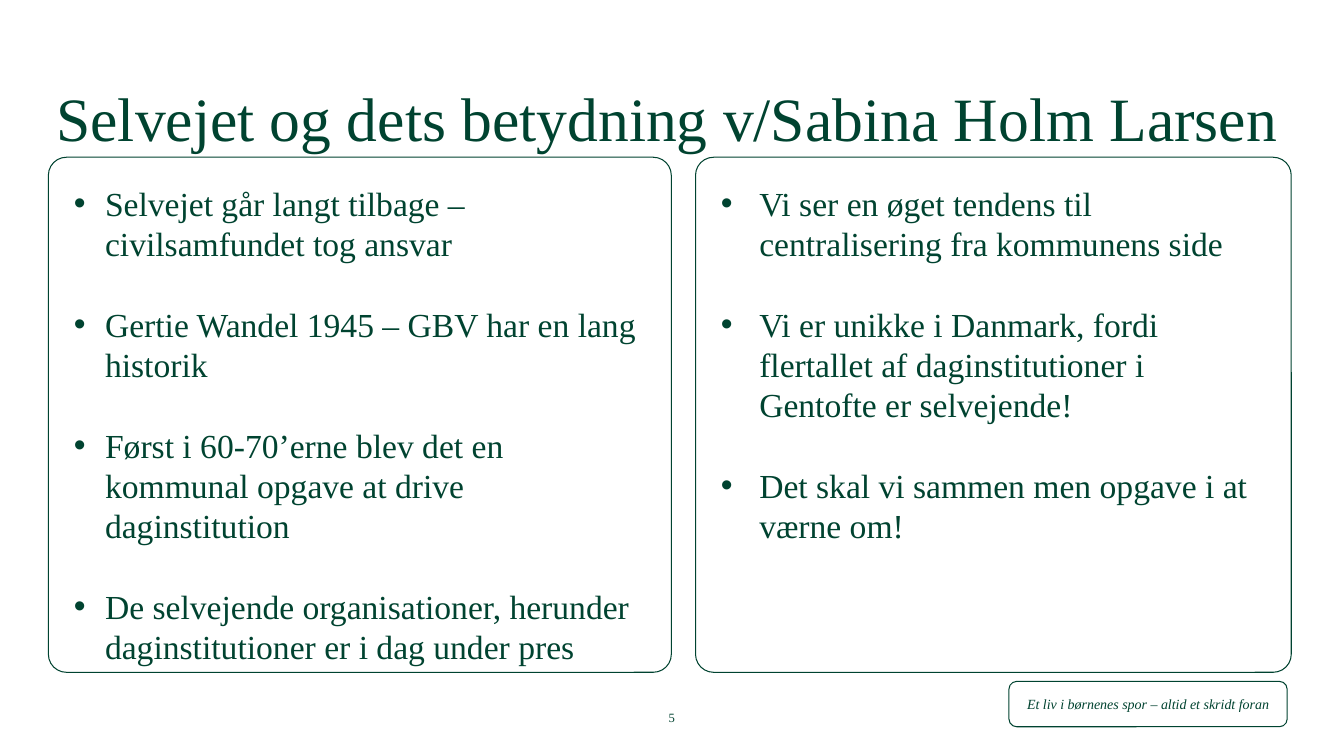
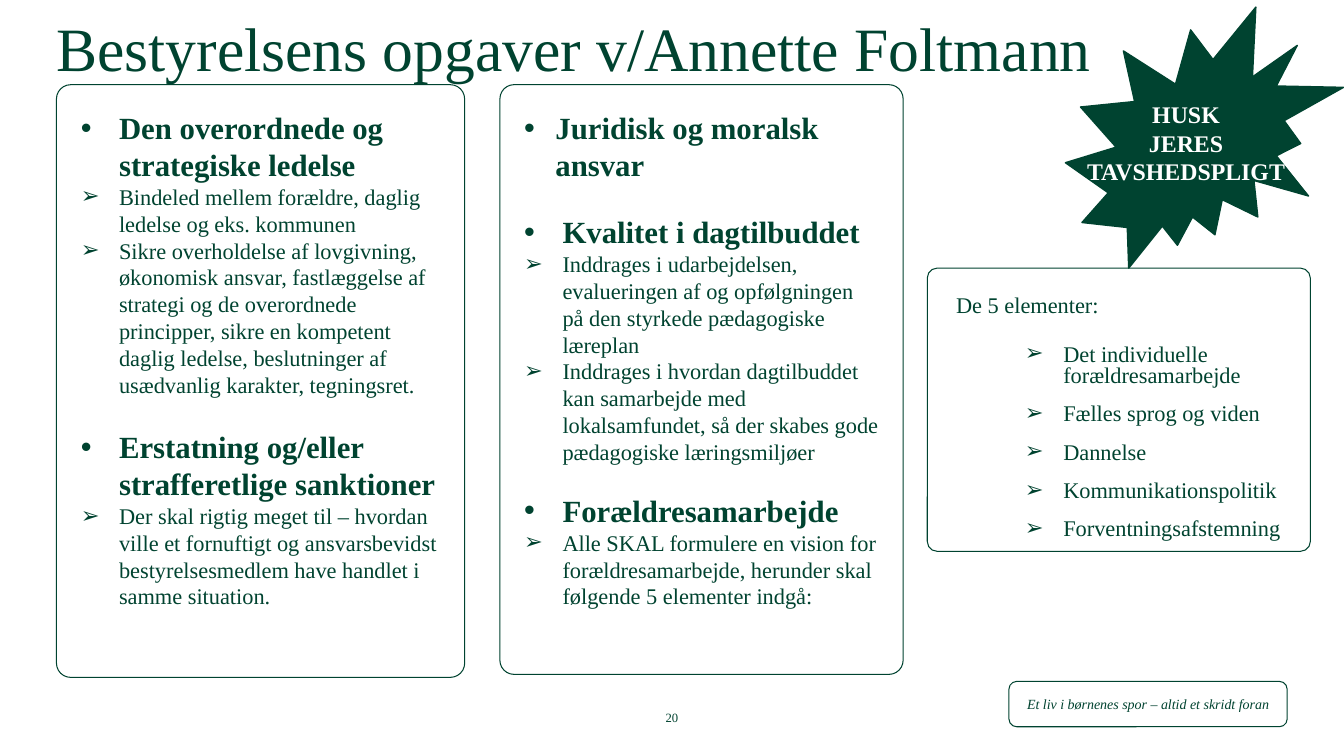
import lxml.etree
import pptx
import pptx.dml.color
import pptx.enum.shapes
import pptx.enum.text
import pptx.oxml.ns
import pptx.util

# Grid: all positions are columns and rows; a column is 1/3 inch, a row 1/4 inch
WIDTH, HEIGHT = pptx.util.Inches(13.333), pptx.util.Inches(7.5)
COLUMNS, ROWS = 40, 30

# Shared style
GREEN, WHITE = "004330", "FFFFFF"
FONT = "Times New Roman"
MOTTO = "Et liv i børnenes spor – altid et skridt foran"
SHAPES = pptx.enum.shapes.MSO_SHAPE
ANCHOR = pptx.enum.text.MSO_ANCHOR
CENTER = pptx.enum.text.PP_ALIGN.CENTER
LINE = 1.2  # height of one text line relative to its font size

# Text formats: font, paragraph, bullet and indent (in columns)
FORMATS = {
    "title": {"font": {"size": 44}, "paragraph": {"line_spacing": 0.9}},
    "number": {"font": {"size": 9}, "paragraph": {"alignment": CENTER}},
    "motto": {"font": {"size": 10, "italic": True}, "paragraph": {"alignment": CENTER}},
    "reminder": {"font": {"size": 17, "bold": True}, "color": WHITE,
                 "paragraph": {"alignment": CENTER}},
    "statement": {"font": {"size": 24}, "bullet": "•", "indent": 1.14},
    "duty": {"font": {"size": 22, "bold": True}, "bullet": "•", "indent": 1.14},
    "detail": {"font": {"size": 16}, "bullet": "➢", "indent": 1.14},
    "lead": {"font": {"size": 16}, "margin": 0.17},
    "element": {"font": {"size": 16}, "bullet": "➢", "margin": 3.36, "indent": 1.14,
                "paragraph": {"line_spacing": 0.8, "space_after": pptx.util.Pt(12)}},
}


def color(hex_value):
    return pptx.dml.color.RGBColor.from_string(hex_value)


def columns(count):
    return round(WIDTH * count / COLUMNS)


def rows(count):
    return round(HEIGHT * count / ROWS)


def apply(target, values):
    for name, value in values.items():
        setattr(target, name, value)


class Deck:
    """Holds the presentation, its style and the current slide."""

    def __init__(self):
        self.presentation = pptx.Presentation()
        apply(self.presentation, {"slide_width": WIDTH, "slide_height": HEIGHT})
        self.slide = None

    def new_slide(self, title, title_bottom, number):
        blank = self.presentation.slide_layouts[6]
        self.slide = self.presentation.slides.add_slide(blank)
        self.panel((30.03, 27.04, 8.28, 1.8), [("motto", MOTTO)], padding=0.32,
                   corner=0.17, anchor=ANCHOR.MIDDLE)
        self.label((1.68, title_bottom - 3.2, 36.6, 3.2), [("title", title)], ANCHOR.BOTTOM)
        self.label((19.17, 27.8, 1.65, 0.96), [("number", number)], ANCHOR.BOTTOM)

    def place(self, area):
        left, top, width, height = area
        return columns(left), rows(top), columns(width), rows(height)

    def label(self, area, lines, anchor=ANCHOR.TOP):
        box = self.slide.shapes.add_textbox(*self.place(area))
        self.set_text(box.text_frame, lines, 0, anchor)

    def shape(self, kind, area, fill, weight):
        outline = self.slide.shapes.add_shape(kind, *self.place(area))
        outline.shadow.inherit = False
        outline.fill.solid()
        outline.fill.fore_color.rgb = color(fill)
        outline.line.color.rgb = color(GREEN)
        outline.line.width = pptx.util.Pt(weight)
        return outline

    def panel(self, area, lines, padding=0.8, corner=0.035, anchor=ANCHOR.TOP):
        frame = self.shape(SHAPES.ROUNDED_RECTANGLE, area, WHITE, 0.75)
        frame.adjustments[0] = corner
        self.set_text(frame.text_frame, lines, padding, anchor)

    def set_text(self, text_frame, lines, padding, anchor):
        apply(text_frame, {"word_wrap": True, "vertical_anchor": anchor})
        apply(text_frame, {f"margin_{side}": rows(padding)
                           for side in ("left", "top", "right", "bottom")})
        for index, (format_name, text, *changes) in enumerate(lines):
            paragraph = text_frame.paragraphs[0] if index == 0 else text_frame.add_paragraph()
            values = FORMATS[format_name] | (changes[0] if changes else {})
            self.bullet(paragraph, values)
            apply(paragraph, {"alignment": pptx.enum.text.PP_ALIGN.LEFT}
                  | values.get("paragraph", {}))
            if "gap" in values:
                paragraph.space_before = pptx.util.Pt(values["gap"] * LINE)
            run = paragraph.add_run()
            run.text = text
            font = values["font"]
            apply(run.font, font | {"name": FONT, "size": pptx.util.Pt(font["size"])})
            run.font.color.rgb = color(values.get("color", GREEN))

    def bullet(self, paragraph, values):
        properties = paragraph._p.get_or_add_pPr()
        indent = values.get("indent", 0)
        properties.set("marL", str(columns(values.get("margin", indent))))
        properties.set("indent", str(-columns(indent)))
        if "bullet" in values:
            for tag, name, value in (("a:buFont", "typeface", "Arial"),
                                     ("a:buChar", "char", values["bullet"])):
                mark = lxml.etree.SubElement(properties, pptx.oxml.ns.qn(tag))
                mark.set(name, value)


def self_ownership(deck):
    deck.new_slide("Selvejet og dets betydning v/Sabina Holm Larsen", 6.16, "5")
    history = [
        "Selvejet går langt tilbage – civilsamfundet tog ansvar",
        "Gertie Wandel 1945 – GBV har en lang historik",
        "Først i 60-70’erne blev det en kommunal opgave at drive daginstitution",
        "De selvejende organisationer, herunder daginstitutioner er i dag under pres",
    ]
    today = [
        "Vi ser en øget tendens til centralisering fra kommunens side",
        "Vi er unikke i Danmark, fordi flertallet af daginstitutioner i Gentofte er selvejende!",
        "Det skal vi sammen men opgave i at værne om!",
    ]
    for left, width, indent, statements in ((1.44, 18.54, 0.93, history),
                                            (20.7, 17.73, 1.14, today)):
        lines = [("statement", text, {"indent": indent} | ({"gap": 24} if index else {}))
                 for index, text in enumerate(statements)]
        deck.panel((left, 6.24, width, 20.44), lines)


def board_duties(deck):
    deck.new_slide("Bestyrelsens opgaver v/Annette Foltmann", 3.36, "20")

    # The five elements
    elements = ["Det individuelle forældresamarbejde", "Fælles sprog og viden", "Dannelse",
                "Kommunikationspolitik", "Forventningsafstemning"]
    deck.panel((27.6, 10.64, 11.4, 11.24),
               [("lead", "De 5 elementer:")]
               + [("element", text, {} if index else {"gap": 16})
                  for index, text in enumerate(elements)])

    # Duties and responsibilities
    deck.panel((1.68, 3.36, 12.15, 23.52), [
        ("duty", "Den overordnede og strategiske ledelse"),
        ("detail", "Bindeled mellem forældre, daglig ledelse og eks. kommunen"),
        ("detail", "Sikre overholdelse af lovgivning, økonomisk ansvar, fastlæggelse af "
                   "strategi og de overordnede principper, sikre en kompetent daglig ledelse, "
                   "beslutninger af usædvanlig karakter, tegningsret."),
        ("duty", "Erstatning og/eller strafferetlige sanktioner", {"gap": 18}),
        ("detail", "Der skal rigtig meget til – hvordan ville et fornuftigt og "
                   "ansvarsbevidst bestyrelsesmedlem have handlet i samme situation."),
    ])
    deck.panel((14.88, 3.36, 12, 23.4), [
        ("duty", "Juridisk og moralsk ansvar", {"indent": 0.93}),
        ("duty", "Kvalitet i dagtilbuddet", {"gap": 18}),
        ("detail", "Inddrages i udarbejdelsen, evalueringen af og opfølgningen på den "
                   "styrkede pædagogiske læreplan"),
        ("detail", "Inddrages i hvordan dagtilbuddet kan samarbejde med lokalsamfundet, "
                   "så der skabes gode pædagogiske læringsmiljøer"),
        ("duty", "Forældresamarbejde", {"gap": 16}),
        ("detail", "Alle SKAL formulere en vision for forældresamarbejde, herunder skal "
                   "følgende 5 elementer indgå:"),
    ])

    # Reminder star
    deck.shape(SHAPES.EXPLOSION2, (31.71, 0.28, 8.28, 10.36), GREEN, 1)
    deck.label((31.7, 3.96, 7.2, 3.44),
               [("reminder", "HUSK"), ("reminder", "JERES TAVSHEDSPLIGT")])


def main():
    deck = Deck()
    self_ownership(deck)
    board_duties(deck)
    deck.presentation.save("out.pptx")


if __name__ == "__main__":
    main()
